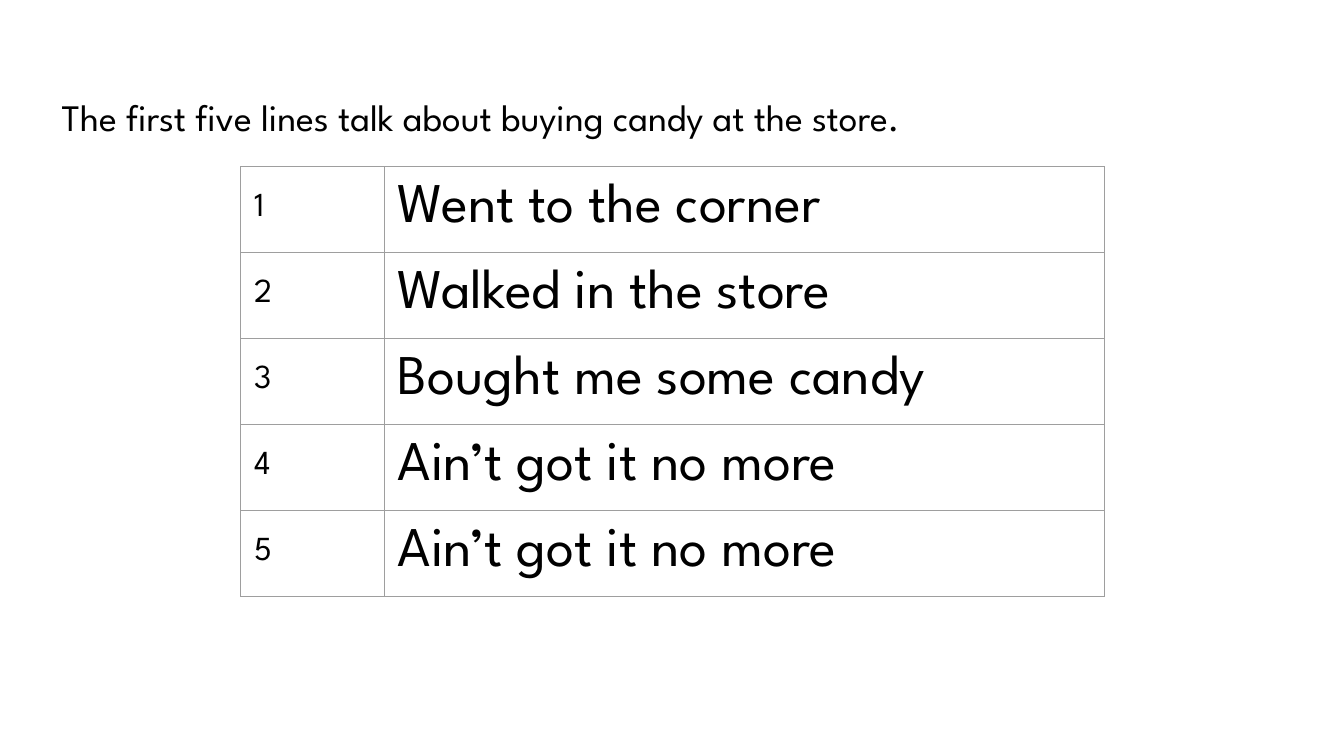
from lxml import etree
from pptx import Presentation
from pptx.dml.color import RGBColor
from pptx.enum.text import MSO_ANCHOR
from pptx.oxml.ns import qn
from pptx.util import Inches, Pt

TOP = MSO_ANCHOR.TOP
FONT = "League Spartan"
COLORS = {"text": "000000", "border": "9E9E9E"}
HEADING = "The first five lines talk about buying candy at the store."
LYRICS = [
    "Went to the corner",
    "Walked in the store",
    "Bought me some candy",
    "Ain’t got it no more",
    "Ain’t got it no more",
]
COLUMN_WIDTHS = (1.07, 5.36)
ROW_HEIGHT = 0.64
INSET = 0.1
NUMBER_TOP_INSET = 0.16


def write_text(frame, text, size, spacing=1.15):
    """Fill a text frame with one formatted line."""
    frame.text = text
    para = frame.paragraphs[0]
    para.line_spacing = spacing
    font = para.runs[0].font
    font.name = FONT
    font.size = Pt(size)
    font.color.rgb = RGBColor.from_string(COLORS["text"])


def set_insets(holder, top=INSET, bottom=INSET):
    """Set the inner margins of a text frame or table cell."""
    holder.margin_left = holder.margin_right = Inches(INSET)
    holder.margin_top = Inches(top)
    holder.margin_bottom = Inches(bottom)


def set_borders(cell):
    """Draw a thin line on all four sides of a cell."""
    properties = cell._tc.get_or_add_tcPr()
    for position, side in enumerate(("a:lnL", "a:lnR", "a:lnT", "a:lnB")):
        line = etree.Element(qn(side), w=str(Pt(0.75)))
        fill = etree.SubElement(line, qn("a:solidFill"))
        etree.SubElement(fill, qn("a:srgbClr"), val=COLORS["border"])
        properties.insert(position, line)


def add_heading(page, left, top, width, height):
    """Place the sentence above the table."""
    box = page.shapes.add_textbox(
        Inches(left), Inches(top), Inches(width), Inches(height)
    )
    frame = box.text_frame
    frame.word_wrap = True
    frame.vertical_anchor = TOP
    set_insets(frame)
    write_text(frame, HEADING, 20)


def add_lyrics_table(page, left, top):
    """Place the numbered lyrics in a two-column table."""
    table = page.shapes.add_table(
        len(LYRICS), len(COLUMN_WIDTHS), Inches(left), Inches(top),
        Inches(sum(COLUMN_WIDTHS)), Inches(ROW_HEIGHT * len(LYRICS)),
    ).table
    table.first_row = table.horz_banding = False
    for column, width in zip(table.columns, COLUMN_WIDTHS):
        column.width = Inches(width)
    for number, (row, lyric) in enumerate(zip(table.rows, LYRICS), start=1):
        row.height = Inches(ROW_HEIGHT)
        number_cell, lyric_cell = row.cells
        set_insets(number_cell, top=NUMBER_TOP_INSET)
        set_insets(lyric_cell, bottom=0)
        write_text(number_cell.text_frame, str(number), 18)
        write_text(lyric_cell.text_frame, lyric, 30, spacing=1.07)
        for cell in row.cells:
            cell.fill.background()
            set_borders(cell)


def main():
    """Build and save the deck."""
    deck = Presentation()
    deck.slide_width = Inches(10)
    deck.slide_height = deck.slide_width * 9 // 16
    page = deck.slides.add_slide(deck.slide_layouts[6])
    add_heading(page, 0.36, 0.55, 9.28, 0.63)
    add_lyrics_table(page, 1.79, 1.24)
    deck.save("out.pptx")


if __name__ == "__main__":
    main()
